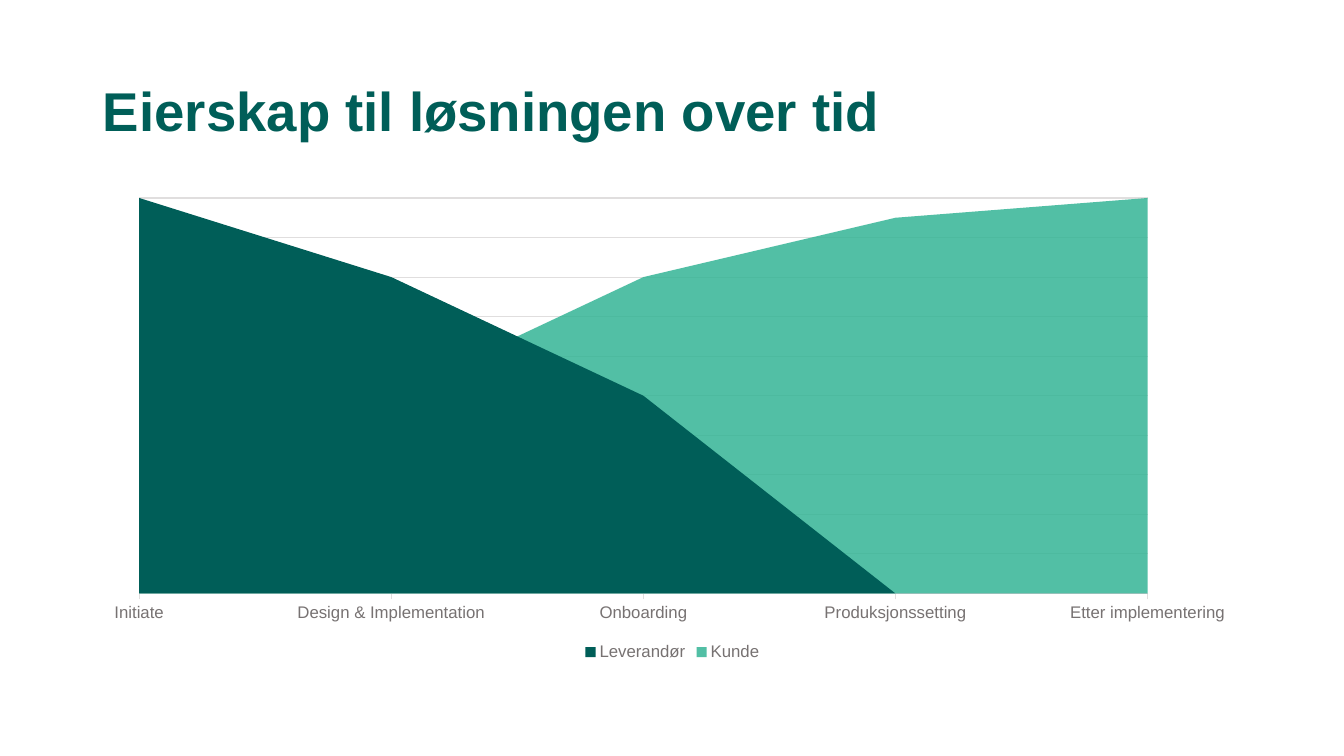
from dataclasses import dataclass

from lxml import etree
from pptx import Presentation
from pptx.chart import data as cd
from pptx.chart.chart import Chart
from pptx.dml.color import RGBColor
from pptx.enum import chart as ce, text as te
from pptx.oxml import ns
from pptx.slide import Slide
from pptx.text.text import Font
from pptx.util import Cm, Pt


@dataclass(frozen=True)
class Theme:
    face: str = "Arial"
    dark: str = "005E58"
    mint: str = "30B393"
    label: str = "777272"
    rule: str = "E0DEDE"
    title: float = 39
    small: float = 12
    thin: float = 0.75


@dataclass(frozen=True)
class Box:
    left: float
    top: float
    width: float
    height: float

    def lengths(self) -> tuple[Cm, Cm, Cm, Cm]:
        return Cm(self.left), Cm(self.top), Cm(self.width), Cm(self.height)


@dataclass(frozen=True)
class Owner:
    name: str
    shares: tuple[int, ...]
    color: str
    alpha: int = 100


THEME = Theme()
HEAD = Box(2.34, 1.68, 29.21, 2.36)
GRAPH = Box(2.34, 4.75, 29.21, 12.01)
PHASES = ("Initiate", "Design & Implementation", "Onboarding",
          "Produksjonssetting", "Etter implementering")
OWNERS = (
    Owner("Leverandør", (100, 80, 50, 0, 0), THEME.dark),
    Owner("Kunde", (10, 50, 80, 95, 100), THEME.mint, 83),
)
# Inner plot area as shares of the chart frame
INNER = {"x": 0.04, "y": 0.02, "w": 0.87, "h": 0.83}


def style(font: Font, size: float, color: str, bold: bool = False) -> None:
    font.name, font.size, font.bold = THEME.face, Pt(size), bold
    font.color.rgb = RGBColor.from_string(color)


def rule(line) -> None:
    line.width = Pt(THEME.thin)
    line.color.rgb = RGBColor.from_string(THEME.rule)


def add_title(slide: Slide, words: str) -> None:
    title = slide.shapes.title
    title.left, title.top, title.width, title.height = HEAD.lengths()
    frame = title.text_frame
    frame.text = words
    frame.word_wrap = True
    frame.auto_size = te.MSO_AUTO_SIZE.NONE
    frame.vertical_anchor = te.MSO_ANCHOR.MIDDLE
    para = frame.paragraphs[0]
    para.alignment = te.PP_ALIGN.LEFT
    para.line_spacing = 0.9
    style(para.runs[0].font, THEME.title, THEME.dark, True)


def place_plot(chart: Chart) -> None:
    area = chart.element.find(".//" + ns.qn("c:plotArea"))
    layout = area.find(ns.qn("c:layout"))
    if layout is None:
        layout = etree.Element(ns.qn("c:layout"))
        area.insert(0, layout)
    manual = etree.SubElement(layout, ns.qn("c:manualLayout"))
    parts = {"layoutTarget": "inner", "xMode": "edge", "yMode": "edge", **INNER}
    for tag, value in parts.items():
        etree.SubElement(manual, ns.qn(f"c:{tag}")).set("val", str(value))


def fill_areas(chart: Chart) -> None:
    for area, owner in zip(chart.plots[0].series, OWNERS):
        fill = area.format.fill
        fill.solid()
        fill.fore_color.rgb = RGBColor.from_string(owner.color)
        area.format.line.fill.background()
    for node, owner in zip(chart.element.iter(ns.qn("c:ser")), OWNERS):
        if owner.alpha < 100:
            color = node.find(".//" + ns.qn("a:srgbClr"))
            etree.SubElement(color, ns.qn("a:alpha")).set("val", str(owner.alpha * 1000))


def add_graph(slide: Slide) -> None:
    data = cd.CategoryChartData()
    data.categories = PHASES
    for owner in OWNERS:
        data.add_series(owner.name, owner.shares)
    chart = slide.shapes.add_chart(ce.XL_CHART_TYPE.AREA, *GRAPH.lengths(), data).chart
    chart.has_title = False
    style(chart.font, THEME.small, THEME.label)
    chart.plots[0].vary_by_categories = False
    fill_areas(chart)
    place_plot(chart)

    # Axes
    phase, share = chart.category_axis, chart.value_axis
    phase.major_tick_mark = ce.XL_TICK_MARK.OUTSIDE
    phase.has_major_gridlines = False
    rule(phase.format.line)
    share.minimum_scale, share.maximum_scale, share.major_unit = 0, 100, 10
    share.major_tick_mark = ce.XL_TICK_MARK.NONE
    share.tick_label_position = ce.XL_TICK_LABEL_POSITION.NONE
    share.format.line.fill.background()
    share.has_major_gridlines = True
    rule(share.major_gridlines.format.line)
    for axis in (phase, share):
        axis.minor_tick_mark = ce.XL_TICK_MARK.NONE
        style(axis.tick_labels.font, THEME.small, THEME.label)
    for cross in chart.element.iter(ns.qn("c:crossBetween")):
        cross.set("val", "midCat")

    # Legend
    chart.has_legend = True
    chart.legend.position = ce.XL_LEGEND_POSITION.BOTTOM
    chart.legend.include_in_layout = False
    style(chart.legend.font, THEME.small, THEME.label)


def main() -> None:
    deck = Presentation()
    deck.slide_width, deck.slide_height = Cm(33.87), Cm(19.05)
    slide = deck.slides.add_slide(deck.slide_layouts[5])
    add_title(slide, "Eierskap til løsningen over tid")
    add_graph(slide)
    deck.save("out.pptx")


if __name__ == "__main__":
    main()
